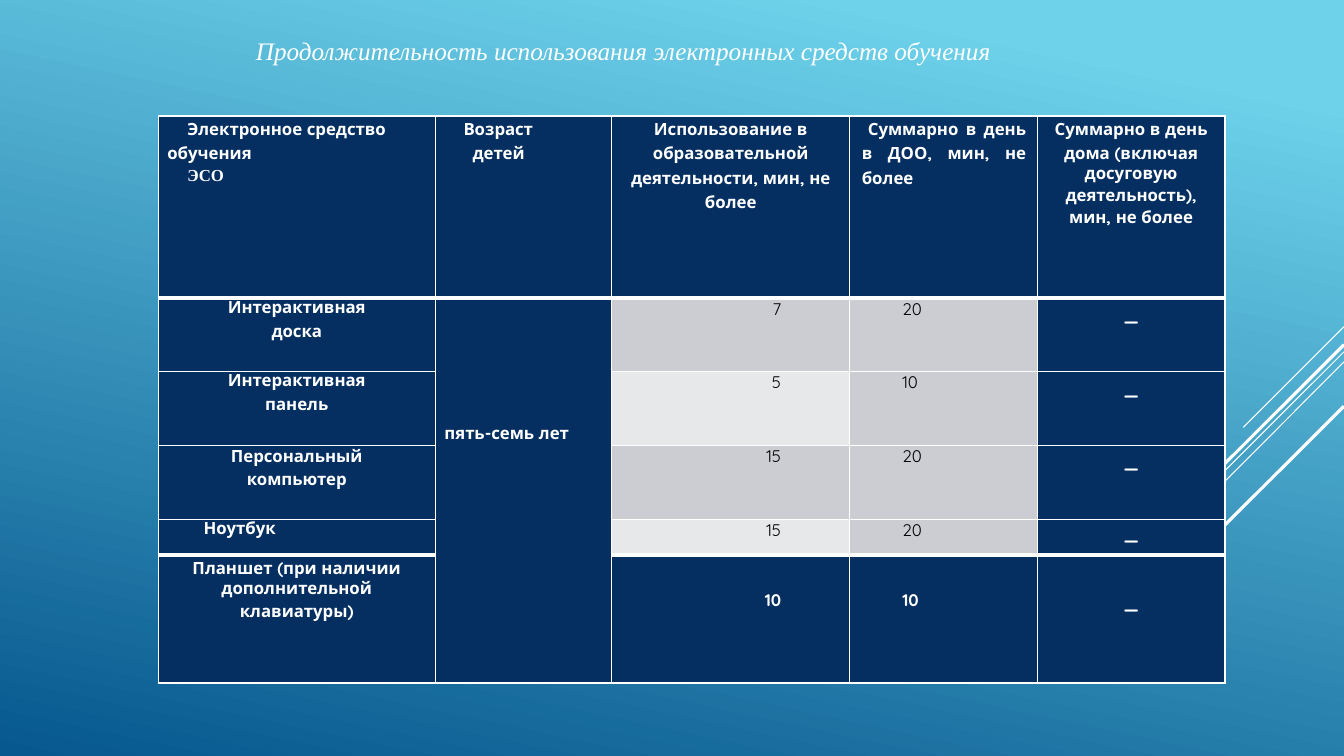
from dataclasses import dataclass, replace
from typing import NamedTuple

from lxml import etree
from pptx import Presentation
from pptx.dml.color import RGBColor
from pptx.enum.shapes import MSO_CONNECTOR
from pptx.enum.text import MSO_AUTO_SIZE, PP_ALIGN
from pptx.oxml.ns import qn
from pptx.util import Length, Pt

STRAIGHT = MSO_CONNECTOR.STRAIGHT
FIT_SHAPE = MSO_AUTO_SIZE.SHAPE_TO_FIT_TEXT
LEFT, CENTER, RIGHT, JUSTIFY = PP_ALIGN.LEFT, PP_ALIGN.CENTER, PP_ALIGN.RIGHT, PP_ALIGN.JUSTIFY

WHITE, BLACK, NAVY = "FFFFFF", "000000", "052F61"
GREY, PALE = "CCCDD2", "E7E8EA"
SANS, SERIF = "Quicksand", "Times New Roman"
EXACT = Pt(13.8)


class Stripe(NamedTuple):
    x1: float
    y1: float
    x2: float
    y2: float
    width: float


@dataclass(frozen=True)
class Line:
    text: str
    align: PP_ALIGN = LEFT
    left: float = 0
    first: float = 0
    right: float = 0
    spacing: float | Length = 1.0
    before: float = 0
    size: float = 12
    font: str = SANS
    color: str = WHITE
    bold: bool = True
    italic: bool = False


@dataclass(frozen=True)
class Cell:
    lines: list[Line]
    fill: str = NAVY
    top: float = 0


STRIPES = [
    Stripe(960, 233.3, 888, 305.3, 0.75),
    Stripe(960, 251.3, 725, 486, 0.75),
    Stripe(960, 258.5, 810.7, 408.2, 0.75),
    Stripe(960, 246.2, 822.2, 383.8, 2.25),
    Stripe(960, 290.2, 859.7, 390.2, 2.25),
]
COLUMN_WIDTHS = [198, 126, 170, 134, 134]
ROW_HEIGHTS = [130.3, 52.5, 52.5, 53.2, 25.2, 91.4]
AGE_COLUMN = 1
LAST_ROW = len(ROW_HEIGHTS) - 1


def rgb(color: str) -> RGBColor:
    return RGBColor.from_string(color)


def heading(text: str, spacing: float | Length = 1.15, before: float = 0) -> Line:
    return Line(text, CENTER, left=6.5, right=6.5, spacing=spacing, before=before)


def device(text: str, spacing: float | Length = 1.0, before: float = 0) -> Line:
    return Line(text, CENTER, left=11.5, right=11.5, spacing=spacing, before=before)


def lesson_minutes(text: str) -> Line:
    return Line(text, RIGHT, right=49, color=BLACK, bold=False)


def day_minutes(text: str) -> Line:
    return Line(text, left=37.5, color=BLACK, bold=False)


def on_navy(line: Line) -> Line:
    return replace(line, color=WHITE, bold=True)


DASH = Line("_", CENTER, size=16)


def device_row(lines: list[Line], lesson: str, day: str, fill: str, dash: Line = DASH) -> list[Cell | None]:
    return [Cell(lines), None, Cell([lesson_minutes(lesson)], fill), Cell([day_minutes(day)], GREY), Cell([dash])]


HEADER = [
    Cell([
        Line("Электронное средство обучения", left=6.5, first=14.4, spacing=1.15),
        Line("ЭСО", left=6.5, first=14.4, spacing=1.15, font=SERIF),
    ]),
    Cell([Line("Возраст детей", left=26.6, first=-6.5, right=40, spacing=1.15)]),
    Cell([heading("Использование в образовательной"), heading("деятельности, мин, не более")]),
    Cell([Line("Суммарно в день в ДОО, мин, не более", JUSTIFY, left=8.6, first=4.3, right=8, spacing=1.15)]),
    Cell([
        heading("Суммарно в день дома (включая"),
        heading("досуговую", Pt(13.7)),
        heading("деятельность), мин, не более", Pt(15.5), 0.4),
    ]),
]
TABLET = [
    Cell([
        device("Планшет (при наличии", 1.15),
        device("дополнительной", EXACT),
        device("клавиатуры)", before=1.9),
    ]),
    None,
    Cell([on_navy(lesson_minutes("10"))], top=25),
    Cell([on_navy(day_minutes("10"))], top=25),
    Cell([DASH], top=22),
]
ROWS = [
    HEADER,
    device_row([device("Интерактивная", EXACT), device("доска", before=2)], "7", "20", GREY),
    device_row([device("Интерактивная", EXACT), device("панель", before=2)], "5", "10", PALE),
    device_row([device("Персональный"), device("компьютер", before=2)], "15", "20", GREY),
    device_row([Line("Ноутбук", left=32.4, spacing=EXACT)], "15", "20", PALE, replace(DASH, spacing=Pt(18.4))),
    TABLET,
]
ROWS[1][AGE_COLUMN] = Cell([Line("пять-семь лет", left=6.5)], top=89)


def write_lines(text_frame, lines: list[Line]) -> None:
    for index, line in enumerate(lines):
        paragraph = text_frame.add_paragraph() if index else text_frame.paragraphs[0]
        paragraph.alignment = line.align
        paragraph.line_spacing = line.spacing
        paragraph.space_before = Pt(line.before)
        properties = paragraph._p.get_or_add_pPr()
        for name, value in (("marL", line.left), ("marR", line.right), ("indent", line.first)):
            properties.set(name, str(Pt(value)))
        run = paragraph.add_run()
        run.text = line.text
        run.font.name, run.font.size = line.font, Pt(line.size)
        run.font.bold, run.font.italic = line.bold, line.italic
        run.font.color.rgb = rgb(line.color)


def set_borders(table_cell, widths: dict[str, float]) -> None:
    properties = table_cell._tc.get_or_add_tcPr()
    for side, width in widths.items():
        border = etree.SubElement(properties, qn(f"a:ln{side}"), w=str(Pt(width)))
        fill = etree.SubElement(border, qn("a:solidFill"))
        etree.SubElement(fill, qn("a:srgbClr"), val=WHITE)


def draw_background(slide) -> None:
    fill = slide.background.fill
    fill.gradient()
    fill.gradient_angle = 258
    for stop, position, color in zip(fill.gradient_stops, (0.1, 1), ("6ED2EB", "06588E")):
        stop.position = position
        stop.color.rgb = rgb(color)


def draw_stripe(slide, stripe: Stripe) -> None:
    connector = slide.shapes.add_connector(
        STRAIGHT, Pt(stripe.x1), Pt(stripe.y1), Pt(stripe.x2), Pt(stripe.y2))
    connector.line.color.rgb = rgb(WHITE)
    connector.line.width = Pt(stripe.width)
    etree.SubElement(connector._element.spPr, qn("a:effectLst"))


def draw_table(slide) -> None:
    table = slide.shapes.add_table(
        len(ROW_HEIGHTS), len(COLUMN_WIDTHS), Pt(113), Pt(82.8),
        Pt(sum(COLUMN_WIDTHS)), Pt(sum(ROW_HEIGHTS))).table
    table.first_row = table.horz_banding = False
    for column, width in zip(table.columns, COLUMN_WIDTHS):
        column.width = Pt(width)
    for row, height in zip(table.rows, ROW_HEIGHTS):
        row.height = Pt(height)
    table.cell(1, AGE_COLUMN).merge(table.cell(LAST_ROW, AGE_COLUMN))

    # Thick rules run under the header and above the last row
    for row_index, row in enumerate(ROWS):
        for column_index, cell in enumerate(row):
            thick = {0, LAST_ROW - 1} if column_index != AGE_COLUMN else {0}
            table_cell = table.cell(row_index, column_index)
            set_borders(table_cell, {
                "L": 1, "R": 1,
                "T": 3 if row_index - 1 in thick else 1,
                "B": 3 if row_index in thick else 1,
            })
            table_cell.fill.solid()
            table_cell.fill.fore_color.rgb = rgb(cell.fill if cell else NAVY)
            table_cell.margin_left = table_cell.margin_right = table_cell.margin_bottom = 0
            table_cell.margin_top = Pt(cell.top if cell else 0)
            if cell:
                write_lines(table_cell.text_frame, cell.lines)


def draw_title(slide) -> None:
    text_frame = slide.shapes.add_textbox(Pt(115.2), Pt(21.6), Pt(616.3), Pt(28.8)).text_frame
    text_frame.word_wrap = True
    text_frame.auto_size = FIT_SHAPE
    write_lines(text_frame, [Line(
        "Продолжительность использования электронных средств обучения",
        left=60.5, size=18, font=SERIF, bold=False, italic=True)])


def main() -> None:
    presentation = Presentation()
    presentation.slide_width, presentation.slide_height = Pt(960), Pt(540)
    slide = presentation.slides.add_slide(presentation.slide_layouts[6])
    draw_background(slide)
    for stripe in STRIPES:
        draw_stripe(slide, stripe)
    draw_table(slide)
    draw_title(slide)
    presentation.save("out.pptx")


if __name__ == "__main__":
    main()
